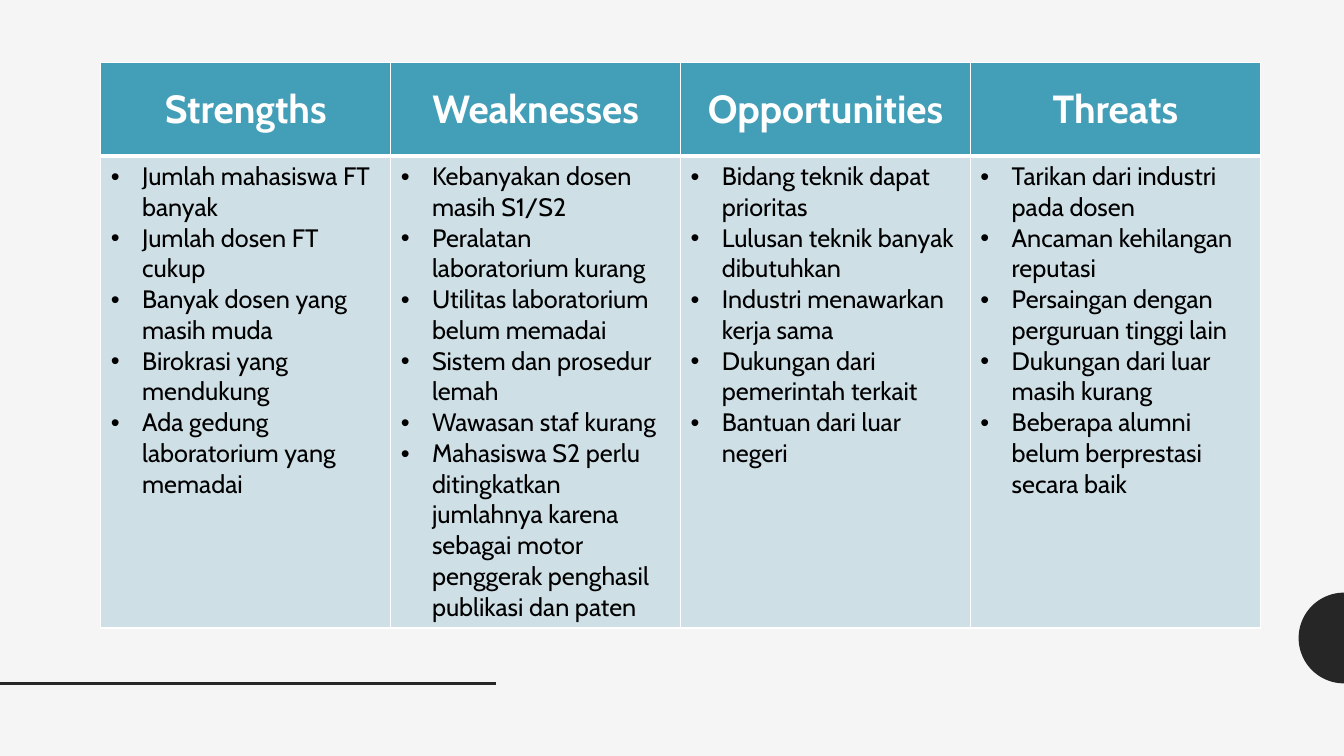
"""Build a SWOT table slide with a half disc and a rule as decoration."""
from dataclasses import dataclass
from math import cos, pi, sin

from lxml.etree import SubElement
from pptx import Presentation
from pptx.dml.color import RGBColor as RGB
from pptx.enum.shapes import MSO_CONNECTOR as CONN
from pptx.enum.text import MSO_ANCHOR as ANCHOR, PP_ALIGN as ALIGN
from pptx.oxml.ns import qn
from pptx.util import Inches, Pt

SWOT = {
    "Strengths": [
        "Jumlah mahasiswa FT banyak",
        "Jumlah dosen FT cukup",
        "Banyak dosen yang masih muda",
        "Birokrasi yang mendukung",
        "Ada gedung laboratorium yang memadai",
    ],
    "Weaknesses": [
        "Kebanyakan dosen masih S1/S2",
        "Peralatan laboratorium kurang",
        "Utilitas laboratorium belum memadai",
        "Sistem dan prosedur lemah",
        "Wawasan staf kurang",
        "Mahasiswa S2 perlu ditingkatkan jumlahnya karena sebagai motor "
        "penggerak penghasil publikasi dan paten",
    ],
    "Opportunities": [
        "Bidang teknik dapat prioritas",
        "Lulusan teknik banyak dibutuhkan",
        "Industri menawarkan kerja sama",
        "Dukungan dari pemerintah terkait",
        "Bantuan dari luar negeri",
    ],
    "Threats": [
        "Tarikan dari industri pada dosen",
        "Ancaman kehilangan reputasi",
        "Persaingan dengan perguruan tinggi lain",
        "Dukungan dari luar masih kurang",
        "Beberapa alumni belum berprestasi secara baik",
    ],
}

SLIDE_W, SLIDE_H = 13.33, 7.5
TABLE_X, TABLE_Y, TABLE_W = 1, 0.62, 11.5
ROW_HEIGHTS = (0.93, 4.68)
DISC_Y, DISC_R, DISC_STEPS = 6.33, 0.45, 48
RULE_Y, RULE_W = 6.78, 4.92
BULLET_INDENT = 0.31


@dataclass(frozen=True)
class Theme:
    font: str = "Cabin"
    back: str = "F5F5F5"
    dark: str = "262626"
    head_fill: str = "439EB7"
    body_fill: str = "CFDFE6"
    border: str = "FFFFFF"
    head_text: str = "FFFFFF"
    body_text: str = "000000"
    head_size: int = 28
    body_size: int = 18
    rule: int = 2
    thin: int = 1
    thick: int = 3


T = Theme()
HEAD_FONT = {"name": T.font, "size": Pt(T.head_size), "bold": True}
BODY_FONT = {"name": T.font, "size": Pt(T.body_size), "bold": False}


def paint(fill, color):
    fill.solid()
    fill.fore_color.rgb = RGB.from_string(color)


def set_borders(cell, widths):
    tc_pr = cell._tc.get_or_add_tcPr()
    for side, width in zip("LRTB", widths):
        ln = SubElement(tc_pr, qn(f"a:ln{side}"), w=str(Pt(width)))
        fill = SubElement(ln, qn("a:solidFill"))
        SubElement(fill, qn("a:srgbClr"), val=T.border)


def write(p, text, font, color):
    r = p.add_run()
    r.text = text
    for key, value in font.items():
        setattr(r.font, key, value)
    r.font.color.rgb = RGB.from_string(color)


def add_bullet(p):
    p_pr = p._p.get_or_add_pPr()
    p_pr.set("marL", str(Inches(BULLET_INDENT)))
    p_pr.set("indent", str(-Inches(BULLET_INDENT)))
    SubElement(p_pr, qn("a:buFont"), typeface="Arial")
    SubElement(p_pr, qn("a:buChar"), char="•")


def fill_head(cell, title):
    set_borders(cell, (T.thin, T.thin, T.thin, T.thick))
    paint(cell.fill, T.head_fill)
    cell.vertical_anchor = ANCHOR.MIDDLE
    p = cell.text_frame.paragraphs[0]
    p.alignment = ALIGN.CENTER
    write(p, title, HEAD_FONT, T.head_text)


def fill_body(cell, points):
    set_borders(cell, (T.thin, T.thin, T.thick, T.thin))
    paint(cell.fill, T.body_fill)
    tf = cell.text_frame
    for i, point in enumerate(points):
        p = tf.add_paragraph() if i else tf.paragraphs[0]
        add_bullet(p)
        write(p, point, BODY_FONT, T.body_text)


def add_swot_table(s):
    box = (TABLE_X, TABLE_Y, TABLE_W, sum(ROW_HEIGHTS))
    table = s.shapes.add_table(2, len(SWOT), *map(Inches, box)).table
    table.horz_banding = False
    for row, height in zip(table.rows, ROW_HEIGHTS):
        row.height = Inches(height)
    for col, (title, points) in enumerate(SWOT.items()):
        table.columns[col].width = Inches(TABLE_W / len(SWOT))
        fill_head(table.cell(0, col), title)
        fill_body(table.cell(1, col), points)


def add_half_disc(s):
    angles = [pi * i / DISC_STEPS for i in range(DISC_STEPS + 1)]
    arc = [(Inches(SLIDE_W - DISC_R * sin(a)), Inches(DISC_Y - DISC_R * cos(a)))
           for a in angles]
    builder = s.shapes.build_freeform(*arc[0])
    builder.add_line_segments(arc[1:], close=True)
    sp = builder.convert_to_shape()
    sp.shadow.inherit = False
    paint(sp.fill, T.dark)
    sp.line.fill.background()


def add_rule(s):
    ends = map(Inches, (0, RULE_Y, RULE_W, RULE_Y))
    rule = s.shapes.add_connector(CONN.STRAIGHT, *ends)
    rule.line.width = Pt(T.rule)
    rule.line.color.rgb = RGB.from_string(T.dark)
    SubElement(rule._element.spPr, qn("a:effectLst"))


def main():
    prs = Presentation()
    prs.slide_width, prs.slide_height = Inches(SLIDE_W), Inches(SLIDE_H)
    s = prs.slides.add_slide(prs.slide_layouts[6])
    paint(s.background.fill, T.back)
    add_half_disc(s)
    add_rule(s)
    add_swot_table(s)
    prs.save("out.pptx")


if __name__ == "__main__":
    main()
